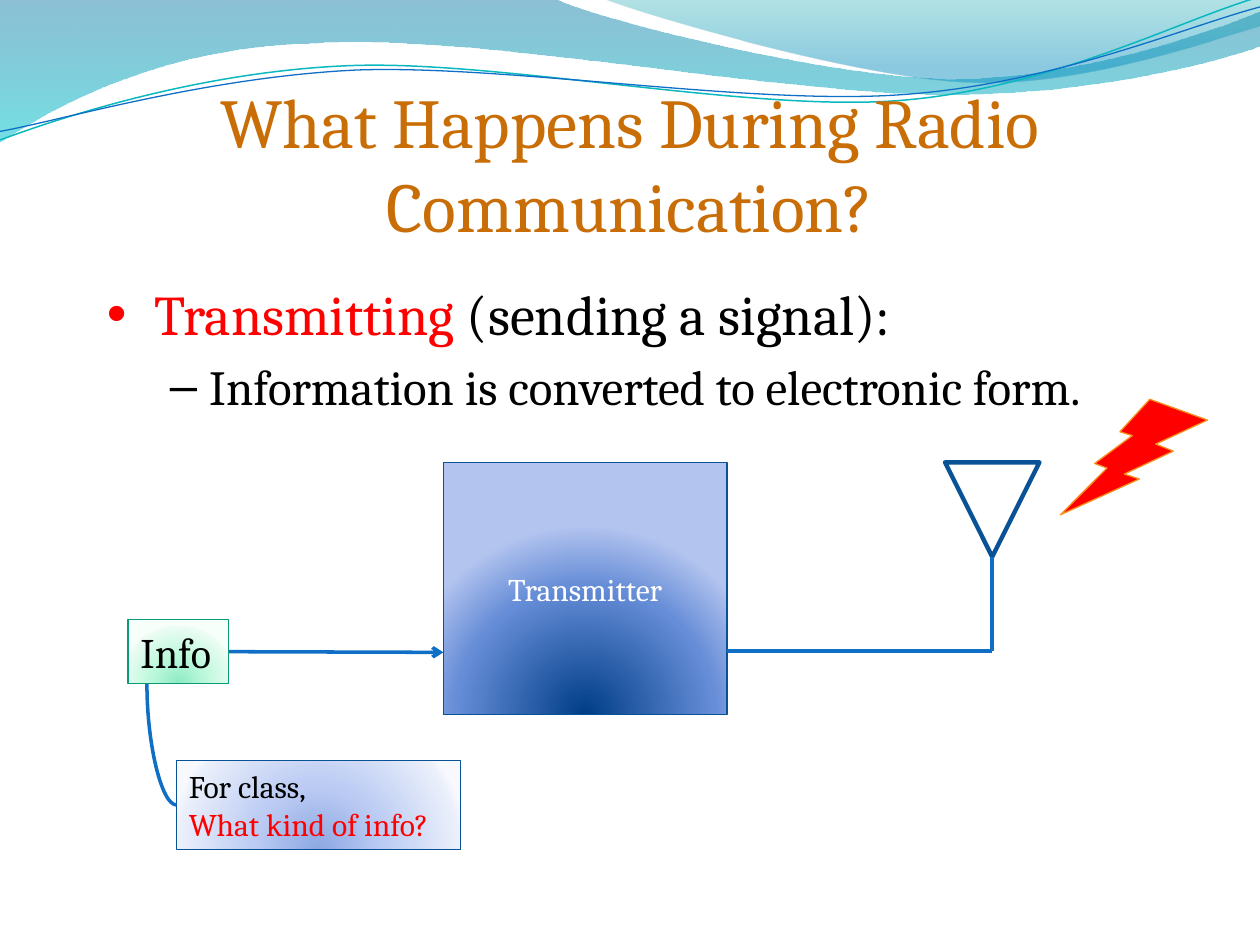
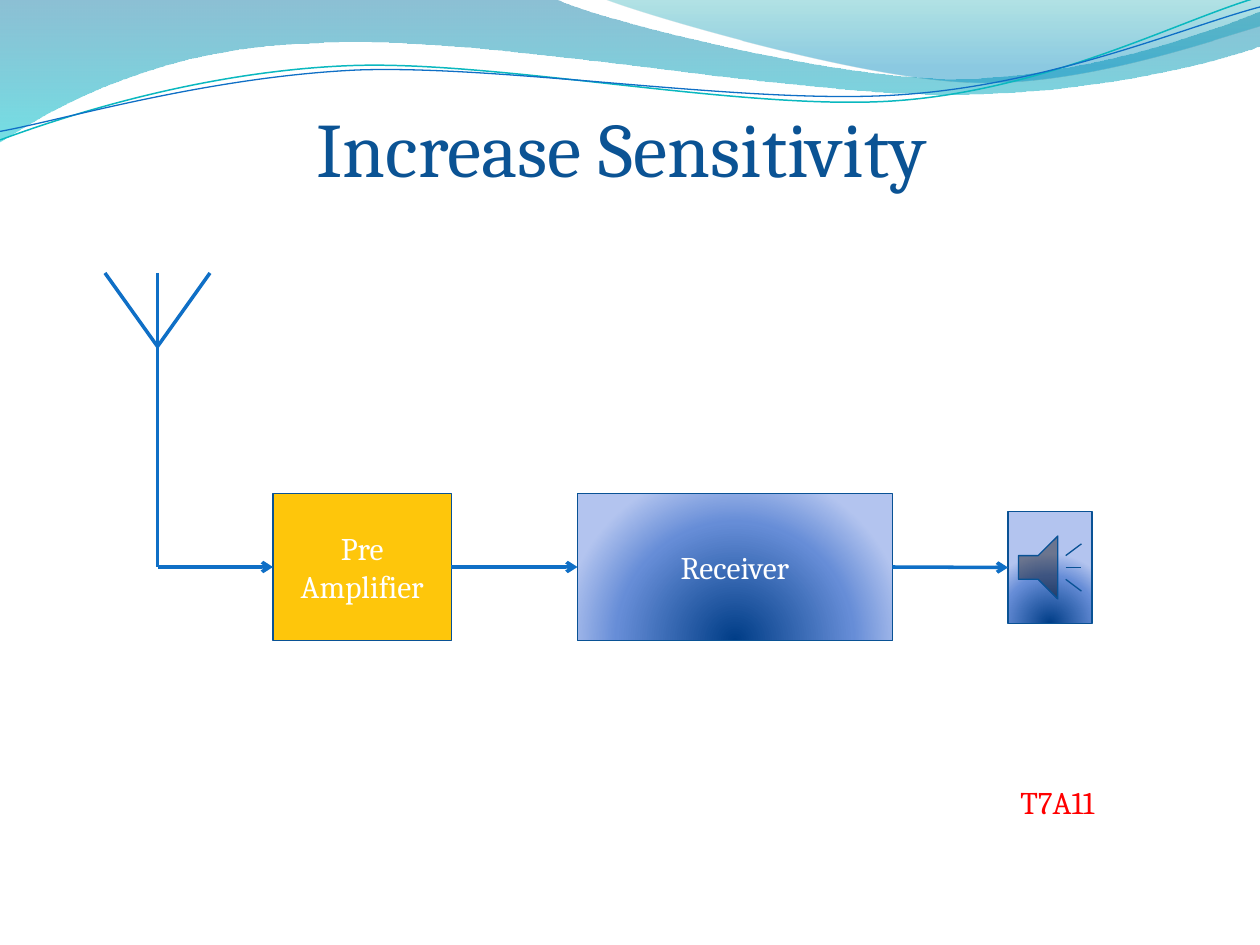
from lxml import etree
from pptx import Presentation
from pptx.dml.color import RGBColor
from pptx.enum import shapes, text
from pptx.oxml import ns
from pptx.util import Pt

FONT = "Cambria"
COLORS = {
    "orange": "C96D07", "title_blue": "0B5394", "red": "FF0000", "black": "000000",
    "white": "FFFFFF", "wire": "0F6FC6", "outline": "095295", "teal": "0AB8BF",
    "green": "0A9B74", "yellow": "FEC60B", "bolt_edge": "F7901E",
}
# Gradient stops: position in percent, colour, opacity in percent
DEEP_BLUE = [(0, "003D87", 100), (68, "668DD7", 100), (100, "B3C4EF", 100)]
PALE_BLUE = [(0, "8DA8E3", 100), (43, "BBCBF3", 100), (93, "EAEFFB", 100), (100, "F7F9FF", 100)]
PALE_GREEN = [(0, "8DEAC2", 100), (43, "BAF8DB", 100), (93, "EAFCF3", 100), (100, "F7FFFB", 100)]
WAVE_TEAL = [(0, "0074A1", 45), (100, "00C6CF", 55)]
WAVE_LIGHT = [(0, "00A1A9", 30), (80, "008BBF", 45)]

# Fill, line, line width, rotation, steps: two numbers are a straight step, six a Bezier curve
WAVES = [
    (WAVE_TEAL, None, 0, 0, [
        (0, 0), (317, -0.7), (343, 12, 478, 45, 546, 45), (614, 45, 690, 19, 720, 6.5),
        (720.7, 26), (708, 32, 626, 55, 537, 54), (447, 54, 275, 20, 185, 24.5),
        (93, 26, 33, 60, -0.7, 81.4)]),
    (WAVE_LIGHT, None, 0, 0, [
        (345, -0.7), (366, 8, 491, 45, 554, 47), (616, 50, 692, 23, 720, 15), (720, 0)]),
    (None, "teal", 0.85, -2.7, [
        (-1.4, 63), (34.2, 51.7, 114.3, 29.4, 199.4, 30),
        (284.4, 30.5, 425.9, 67.2, 512.1, 64.7), (599.3, 62.3, 676.1, 25.9, 720.6, 15.4)]),
    (None, "wire", 0.75, -2.7, [
        (-1.1, 58.1), (33.1, 53.7, 118.2, 32.6, 204.3, 32.7),
        (290.3, 33.7, 429.1, 63.8, 515.3, 61.4), (601.5, 59.4, 678.9, 30, 721.4, 21)]),
]


def paint(shape, fill, line, width=0.75, radial=True):
    """Fill with a colour name, a list of gradient stops or None, and set the outline."""
    shape.shadow.inherit = False
    if fill is None:
        shape.fill.background()
    else:
        shape.fill.solid()
        if isinstance(fill, str):
            shape.fill.fore_color.rgb = RGBColor.from_string(COLORS[fill])
        else:
            stops = "".join(
                f'<a:gs pos="{at * 1000}"><a:srgbClr val="{color}">'
                f'<a:alpha val="{alpha * 1000}"/></a:srgbClr></a:gs>'
                for at, color, alpha in fill)
            shade = ('<a:path path="circle"><a:fillToRect l="50000" t="130000" r="50000" '
                     'b="-30000"/></a:path>' if radial else '<a:lin ang="5400000" scaled="1"/>')
            gradient = etree.fromstring(
                f'<a:gradFill {ns.nsdecls("a")} rotWithShape="1"><a:gsLst>{stops}</a:gsLst>'
                f'{shade}</a:gradFill>')
            properties = shape.element.spPr
            properties.replace(properties.find(ns.qn("a:solidFill")), gradient)
    if line:
        shape.line.color.rgb = RGBColor.from_string(COLORS[line])
        shape.line.width = Pt(width)
    else:
        shape.line.fill.background()


def wire(slide, start, end, arrow=False, begin=None, finish=None,
         kind=shapes.MSO_CONNECTOR.STRAIGHT):
    """Draw a line; begin and finish are (shape, side) pairs to join."""
    line = slide.shapes.add_connector(kind, *[Pt(v) for v in (*start, *end)])
    if begin:
        line.begin_connect(*begin)
    if finish:
        line.end_connect(*finish)
    line.line.color.rgb = RGBColor.from_string(COLORS["wire"])
    line.line.width = Pt(2)
    properties = line.element.spPr
    if arrow:
        etree.SubElement(properties.find(ns.qn("a:ln")), ns.qn("a:tailEnd"), type="arrow")
    etree.SubElement(properties, ns.qn("a:effectLst"))
    return line


deck = Presentation()
deck.slide_width, deck.slide_height = Pt(720), Pt(540)
layout = deck.slide_layouts[5]
transmit_page = deck.slides.add_slide(layout)
receive_page = deck.slides.add_slide(layout)

# Waves shared by both slides, kept on the layout
for number, (fill, line, width, turn, steps) in enumerate(WAVES):
    corners = [(Pt(step[-2]), Pt(step[-1])) for step in steps]
    outline = transmit_page.shapes.build_freeform(*corners[0])
    outline.add_line_segments(corners[1:], close=fill is not None)
    wave = outline.convert_to_shape()
    segments = list(wave.element.iter(ns.qn("a:lnTo")))
    for segment, step in zip(segments, steps[1:]):
        if len(step) == 6:
            bend = etree.Element(ns.qn("a:cubicBezTo"))
            for x, y in zip(step[::2], step[1::2]):
                etree.SubElement(bend, ns.qn("a:pt"),
                                 x=str(Pt(x) - wave.left), y=str(Pt(y) - wave.top))
            segment.getparent().replace(segment, bend)
    wave.rotation = turn
    paint(wave, fill, line, width, radial=False)
    wave.element.nvSpPr.cNvPr.set("id", str(20 + number))
    layout.shapes.element.append(wave.element)

# Titles
for page, words, place, size, color, align, anchor, wrap in [
    (transmit_page, "What Happens During Radio Communication?", (54, 48, 612, 90), 40,
     "orange", text.PP_ALIGN.CENTER, text.MSO_ANCHOR.MIDDLE, True),
    (receive_page, "Increase Sensitivity", (173.6, 54, 366.5, 60.5), 44,
     "title_blue", text.PP_ALIGN.LEFT, text.MSO_ANCHOR.TOP, False),
]:
    title = page.shapes.title
    title.left, title.top, title.width, title.height = [Pt(v) for v in place]
    frame = title.text_frame
    frame.text = words
    frame.auto_size = text.MSO_AUTO_SIZE.NONE
    frame.word_wrap, frame.vertical_anchor = wrap, anchor
    frame.paragraphs[0].alignment = align
    font = frame.paragraphs[0].runs[0].font
    font.name, font.size = FONT, Pt(size)
    font.color.rgb = RGBColor.from_string(COLORS[color])

# Bulleted explanation
body = transmit_page.shapes.add_textbox(Pt(54), Pt(156), Pt(612), Pt(324))
body.text_frame.word_wrap = True
for level, (bullet, margin, indent, size, spans) in enumerate([
    ("•", 27, -27, 32, [("Transmitting", "red"), (" (sending a signal):", "black")]),
    ("–", 58.5, -22.5, 28, [("Information is converted to electronic form.", "black")]),
]):
    para = body.text_frame.add_paragraph() if level else body.text_frame.paragraphs[0]
    para.level = level
    para.space_before = Pt(size * 0.2)
    for words, color in spans:
        span = para.add_run()
        span.text = words
        span.font.name, span.font.size = FONT, Pt(size)
        span.font.color.rgb = RGBColor.from_string(COLORS[color])
    properties = para._p.get_or_add_pPr()
    properties.set("marL", str(Pt(margin)))
    properties.set("indent", str(Pt(indent)))
    etree.SubElement(properties, ns.qn("a:buFont"), typeface="Arial")
    etree.SubElement(properties, ns.qn("a:buChar"), char=bullet)

# Labelled boxes
CENTER, LEFT = text.PP_ALIGN.CENTER, text.PP_ALIGN.LEFT
boxes = {}
for name, page, place, fill, line, size, align, lines in [
    ("transmitter", transmit_page, (253.4, 264.3, 162, 144), DEEP_BLUE, "outline", 18, CENTER,
     [("Transmitter", "white")]),
    ("info", transmit_page, (73.2, 354.2, 57.6, 36.4), PALE_GREEN, "green", 24, LEFT,
     [("Info", "black")]),
    ("note", transmit_page, (100.8, 434.5, 162.6, 51), PALE_BLUE, "outline", 18, LEFT,
     [("For class,", "black"), ("What kind of info?", "red")]),
    ("receiver", receive_page, (330, 282, 180, 84), DEEP_BLUE, "outline", 18, CENTER,
     [("Receiver", "white")]),
    ("amplifier", receive_page, (156, 282, 102, 84), "yellow", "outline", 18, CENTER,
     [("Pre", "white"), ("Amplifier", "white")]),
    ("question", receive_page, (576, 444, 67, 29), None, None, 18, LEFT,
     [("T7A11", "red")]),
]:
    place = [Pt(v) for v in place]
    if line:
        box = page.shapes.add_shape(shapes.MSO_SHAPE.RECTANGLE, *place)
        paint(box, fill, line)
    else:
        box = page.shapes.add_textbox(*place)
    frame = box.text_frame
    frame.word_wrap = align == CENTER
    frame.text = "\n".join(words for words, color in lines)
    for para, (words, color) in zip(frame.paragraphs, lines):
        para.alignment = align
        font = para.runs[0].font
        font.name, font.size = FONT, Pt(size)
        font.color.rgb = RGBColor.from_string(COLORS[color])
    boxes[name] = box

# Symbols
for name, page, kind, place, fill, line, width in [
    ("antenna", transmit_page, shapes.MSO_SHAPE.FLOWCHART_MERGE,
     (540, 264.2, 54, 54), None, "outline", 2.5),
    ("bolt", transmit_page, shapes.MSO_SHAPE.LIGHTNING_BOLT,
     (606, 228.2, 84, 66), "red", "bolt_edge", 0.75),
    ("speaker", receive_page, shapes.MSO_SHAPE.ACTION_BUTTON_SOUND,
     (576, 292.3, 48, 64), DEEP_BLUE, "outline", 0.75),
]:
    boxes[name] = page.shapes.add_shape(kind, *[Pt(v) for v in place])
    paint(boxes[name], fill, line, width)
boxes["bolt"].element.spPr.xfrm.set("flipH", "1")

# Wiring of the transmitter
wire(transmit_page, (130.8, 372.4), (253.4, 372.8), arrow=True, begin=(boxes["info"], 3))
wire(transmit_page, (567, 318.2), (567, 372), begin=(boxes["antenna"], 2))
wire(transmit_page, (567, 372), (415.4, 372))
curve = wire(transmit_page, (100.8, 460), (84, 391), begin=(boxes["note"], 1),
             kind=shapes.MSO_CONNECTOR.CURVE)
curve.element.spPr.find(ns.qn("a:prstGeom")).set("prst", "curvedConnector2")

# Wiring of the receiver
for tip in [(60, 156), (120, 156)]:
    wire(receive_page, (90, 198), tip)
wire(receive_page, (90, 156), (90, 324))
wire(receive_page, (90, 324), (156, 324), arrow=True, finish=(boxes["amplifier"], 1))
for source, target in [("amplifier", "receiver"), ("receiver", "speaker")]:
    wire(receive_page, (0, 324), (720, 324), arrow=True,
         begin=(boxes[source], 3), finish=(boxes[target], 1))

deck.save("out.pptx")
